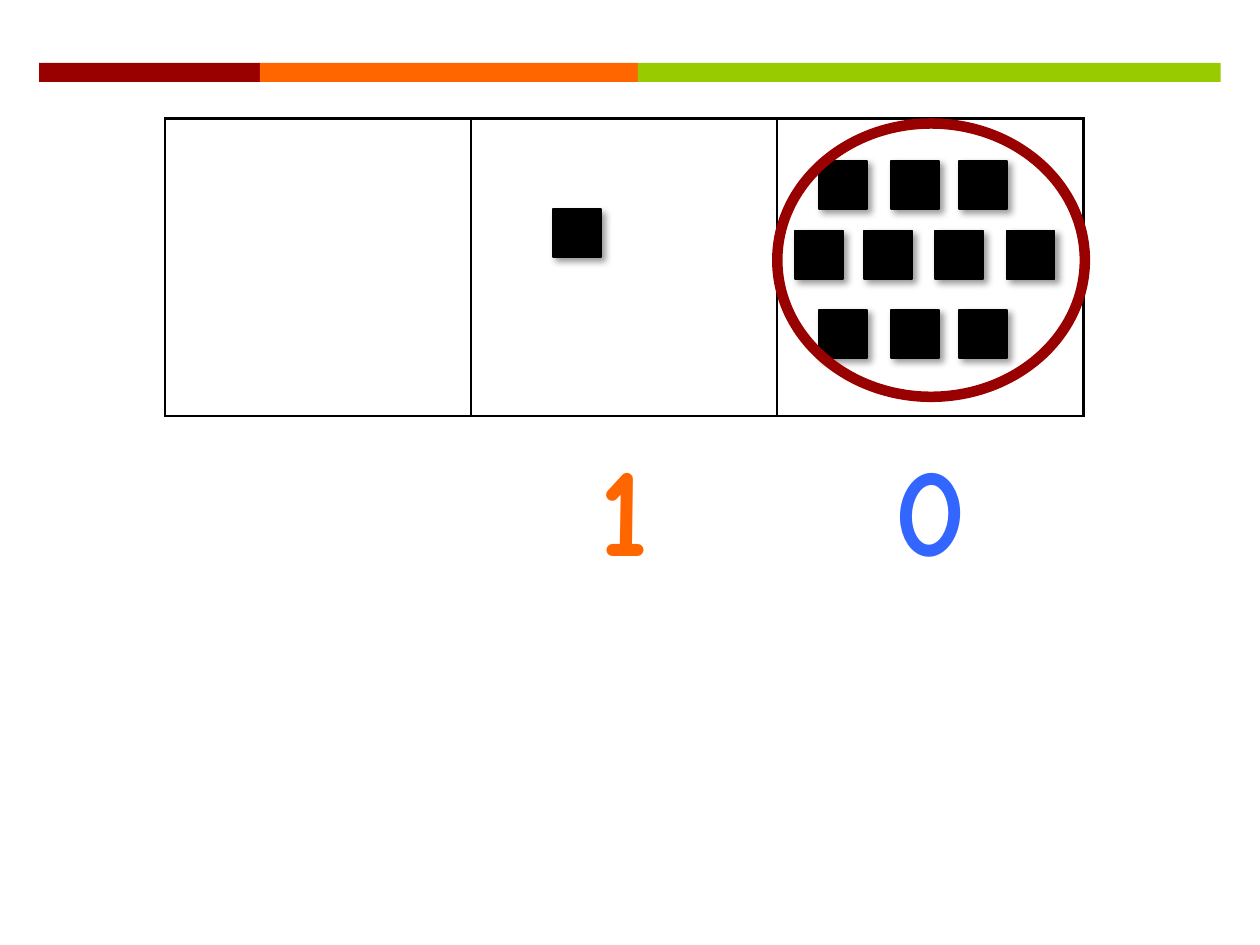
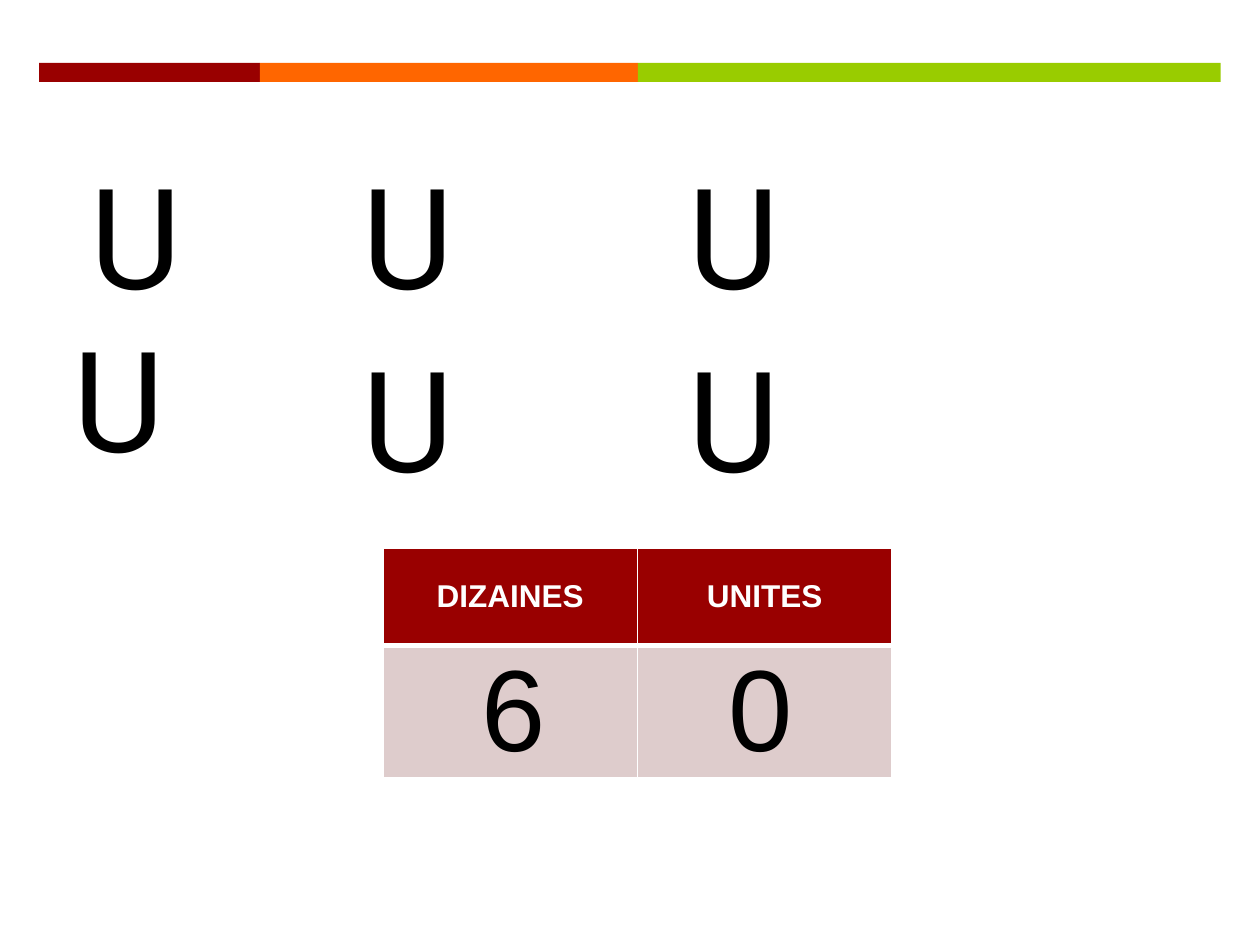
from dataclasses import dataclass

from lxml.etree import SubElement
from pptx import Presentation
from pptx.dml.color import RGBColor
from pptx.enum.shapes import MSO_SHAPE
from pptx.enum.text import MSO_ANCHOR, MSO_AUTO_SIZE, PP_ALIGN
from pptx.oxml.ns import qn
from pptx.util import Cm, Pt

DARK_RED, ORANGE, GREEN, BLUE = "990000", "FF6600", "99CC00", "3366FF"
BLACK, WHITE, PALE_RED = "000000", "FFFFFF", "DECCCC"


@dataclass(frozen=True)
class Box:
    """A place on the slide, in centimetres."""
    left: float
    top: float
    width: float
    height: float

    def lengths(self) -> tuple:
        return tuple(Cm(n) for n in (self.left, self.top, self.width, self.height))


@dataclass(frozen=True)
class Lettering:
    size: float
    font: str
    color: str
    bold: bool = False


@dataclass(frozen=True)
class Borders:
    """Cell border colour and the widths of its sides in points."""
    color: str
    side: float = 1
    top: float = 1
    bottom: float = 1


def rgb(color: str) -> RGBColor:
    return RGBColor.from_string(color)


def write(paragraph, text: str, lettering: Lettering, align=PP_ALIGN.CENTER) -> None:
    paragraph.alignment = align
    run = paragraph.add_run()
    run.text = text
    run.font.size = Pt(lettering.size)
    run.font.name = lettering.font
    run.font.bold = lettering.bold
    run.font.color.rgb = rgb(lettering.color)


def draw(slide, preset, box: Box, fill: str = "", line: str = "", width: float = 1):
    shape = slide.shapes.add_shape(preset, *box.lengths())
    shape.shadow.inherit = False
    if fill:
        shape.fill.solid()
        shape.fill.fore_color.rgb = rgb(fill)
    else:
        shape.fill.background()
    if line:
        shape.line.color.rgb = rgb(line)
        shape.line.width = Pt(width)
    else:
        shape.line.fill.background()
    return shape


def draw_counter(slide, left: float, top: float) -> None:
    """Draw one black counting square with a soft shadow."""
    counter = draw(slide, MSO_SHAPE.RECTANGLE, Box(left, top, 0.97, 0.97), BLACK, BLACK)
    effects = counter.element.spPr.find(qn("a:effectLst"))
    shadow = SubElement(effects, qn("a:outerShdw"), blurRad=str(Pt(4)), dist=str(Pt(3)),
                        dir="2700000", algn="tl", rotWithShape="0")
    color = SubElement(shadow, qn("a:srgbClr"), val=BLACK)
    SubElement(color, qn("a:alpha"), val="40000")


def add_grid(slide, left: float, top: float, columns: list[float], rows: list[float]):
    box = Box(left, top, sum(columns), sum(rows))
    table = slide.shapes.add_table(len(rows), len(columns), *box.lengths()).table
    table.first_row = table.horz_banding = False
    for column, width in zip(table.columns, columns):
        column.width = Cm(width)
    for row, height in zip(table.rows, rows):
        row.height = Cm(height)
    return table


def style_cell(cell, fill: str = "", borders: Borders | None = None) -> None:
    if borders:
        properties = cell._tc.get_or_add_tcPr()
        sides = {"L": borders.side, "R": borders.side,
                 "T": borders.top, "B": borders.bottom}
        for side, width in sides.items():
            line = SubElement(properties, qn(f"a:ln{side}"), w=str(Pt(width)))
            SubElement(SubElement(line, qn("a:solidFill")), qn("a:srgbClr"),
                       val=borders.color)
    if fill:
        cell.fill.solid()
        cell.fill.fore_color.rgb = rgb(fill)
    else:
        cell.fill.background()


def add_text(slide, box: Box, text: str, lettering: Lettering, align, wrap: bool) -> None:
    frame = slide.shapes.add_textbox(*box.lengths()).text_frame
    frame.word_wrap = wrap
    frame.auto_size = MSO_AUTO_SIZE.SHAPE_TO_FIT_TEXT
    write(frame.paragraphs[0], text, lettering, align)


def add_band_to_layout(slide) -> None:
    """Draw the three-colour band and move it to the layout all slides share."""
    left = 0.79
    for color, width in ((DARK_RED, 4.45), (ORANGE, 7.62), (GREEN, 11.75)):
        stripe = draw(slide, MSO_SHAPE.RECTANGLE, Box(left, 1.27, width, 0.38), color)
        slide.slide_layout.shapes.element.append(stripe.element)
        left += width


def build_counting_slide(slide) -> None:
    left, columns, rows = 3.33, [6.17] * 3, [5.99]
    for cell in add_grid(slide, left, 2.39, columns, rows).iter_cells():
        style_cell(cell, borders=Borders(BLACK, 1.5, 1.5, 1.5))

    number = add_grid(slide, left, 8.81, columns, rows)
    digits = ("", ""), ("1", ORANGE), ("0", BLUE)
    for cell, (digit, color) in zip(number.iter_cells(), digits):
        style_cell(cell)
        if digit:
            write(cell.text_frame.paragraphs[0], digit,
                  Lettering(72, "Comic Neue", color, True))

    three = (16.51, 17.96, 19.33)
    four = (16.03, 17.42, 18.85, 20.29)
    for top, lefts in ((3.25, three), (4.65, four), (6.25, three)):
        for counter_left in lefts:
            draw_counter(slide, counter_left, top)
    draw(slide, MSO_SHAPE.OVAL, Box(15.67, 2.49, 6.2, 5.51), line=DARK_RED, width=6)
    draw_counter(slide, 11.15, 4.22)


def build_tens_slide(slide) -> None:
    place_values = add_grid(slide, 7.72, 11.05, [5.13] * 2, [1.96, 2.67])
    digit_style = Lettering(66, "Arial", BLACK)
    columns = ("DIZAINES", "6", 9.07), ("UNITES", "0", 14.05)
    for index, (heading, digit, digit_left) in enumerate(columns):
        head = place_values.cell(0, index)
        style_cell(head, DARK_RED, Borders(WHITE, bottom=3))
        head.vertical_anchor = MSO_ANCHOR.MIDDLE
        write(head.text_frame.paragraphs[0], heading, Lettering(18, "Arial", WHITE, True))
        style_cell(place_values.cell(1, index), PALE_RED, Borders(WHITE, top=3))
        add_text(slide, Box(digit_left, 12.7, 2.57, 3.07), digit, digit_style,
                 PP_ALIGN.CENTER, True)

    unit_style = Lettering(80, "Roboto", BLACK)
    units = ((1.57, 2.9), (7.06, 2.9), (13.64, 2.9),
             (1.24, 6.17), (7.06, 6.58), (13.64, 6.58))
    for left, top in units:
        add_text(slide, Box(left, top, 4.9, 3.68), "U", unit_style, PP_ALIGN.LEFT, False)


def main() -> None:
    deck = Presentation()
    deck.slide_width, deck.slide_height = Cm(25.4), Cm(19.05)
    blank = deck.slide_layouts[6]
    counting, tens = (deck.slides.add_slide(blank) for _ in range(2))
    add_band_to_layout(counting)
    build_counting_slide(counting)
    build_tens_slide(tens)
    deck.save("out.pptx")


if __name__ == "__main__":
    main()
